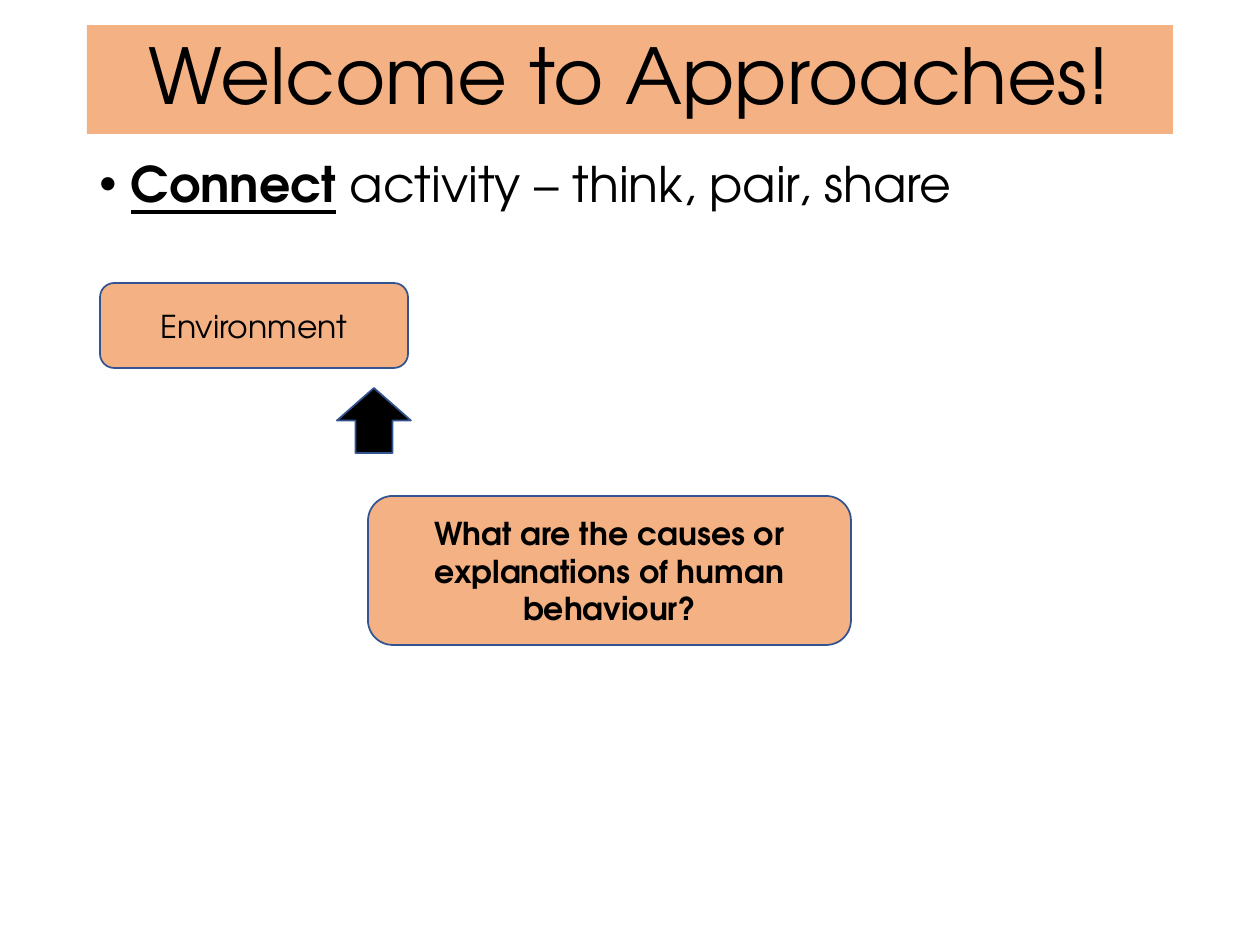
from dataclasses import dataclass

import pptx
import pptx.dml.color
import pptx.enum.shapes
import pptx.enum.text
import pptx.oxml
import pptx.oxml.ns
import pptx.util

PX_PER_INCH = 126
FONT = "TeX Gyre Adventor"
COLORS = {"peach": "F4B183", "black": "000000", "outline": "325491"}
SHAPES = pptx.enum.shapes.MSO_SHAPE


@dataclass
class Block:
    preset: int
    left: int
    top: int
    width: int
    height: int
    fill: str = "peach"
    text: str = ""
    size: int = 18
    bold: bool = False
    outlined: bool = True
    line_spacing: float = 1.0


BLOCKS = [
    Block(SHAPES.RECTANGLE, 87, 25, 1086, 109, text="Welcome to Approaches!",
          size=44, outlined=False, line_spacing=0.9),
    Block(SHAPES.FLOWCHART_ALTERNATE_PROCESS, 368, 496, 483, 149,
          text="What are the causes or explanations of human behaviour?", bold=True),
    Block(SHAPES.ROUNDED_RECTANGLE, 100, 283, 308, 85, text="Environment"),
    Block(SHAPES.UP_ARROW, 337, 388, 74, 65, fill="black"),
]


def px(length: int) -> pptx.util.Emu:
    return pptx.util.Emu(round(length * 914400 / PX_PER_INCH))


def color(name: str) -> pptx.dml.color.RGBColor:
    return pptx.dml.color.RGBColor.from_string(COLORS[name])


def set_font(paragraph, size: int) -> None:
    paragraph.font.name = FONT
    paragraph.font.size = pptx.util.Pt(size)
    paragraph.font.color.rgb = color("black")


def draw_block(slide, block: Block) -> None:
    shape = slide.shapes.add_shape(
        block.preset, px(block.left), px(block.top), px(block.width), px(block.height))
    shape.shadow.inherit = False
    shape.fill.solid()
    shape.fill.fore_color.rgb = color(block.fill)
    if block.outlined:
        shape.line.color.rgb = color("outline")
        shape.line.width = pptx.util.Pt(1)
    else:
        shape.line.fill.background()
    if block.text:
        frame = shape.text_frame
        frame.word_wrap = True
        frame.vertical_anchor = pptx.enum.text.MSO_ANCHOR.MIDDLE
        paragraph = frame.paragraphs[0]
        paragraph.text = block.text
        paragraph.alignment = pptx.enum.text.PP_ALIGN.CENTER
        paragraph.line_spacing = block.line_spacing
        set_font(paragraph, block.size)
        paragraph.font.bold = block.bold


def draw_activity(slide) -> None:
    box = slide.shapes.add_textbox(px(87), px(154), px(1086), px(600))
    box.text_frame.word_wrap = True
    paragraph = box.text_frame.paragraphs[0]
    paragraph.line_spacing = 0.9
    paragraph.space_before = pptx.util.Pt(10)
    set_font(paragraph, 28)
    keyword = paragraph.add_run()
    keyword.text = "Connect"
    keyword.font.bold = True
    keyword.font.underline = True
    paragraph.add_run().text = " activity – think, pair, share"

    # Hanging bullet, placed ahead of the default run properties
    properties = paragraph._p.get_or_add_pPr()
    indent = pptx.util.Inches(0.25)
    properties.set("marL", str(indent))
    properties.set("indent", str(-indent))
    namespace = pptx.oxml.ns.nsdecls("a")
    defaults = properties.find(pptx.oxml.ns.qn("a:defRPr"))
    for tag in ('buFont {} typeface="Arial"', 'buChar {} char="•"'):
        defaults.addprevious(pptx.oxml.parse_xml(f"<a:{tag.format(namespace)}/>"))


def main() -> None:
    presentation = pptx.Presentation()
    presentation.slide_width = pptx.util.Inches(10)
    presentation.slide_height = pptx.util.Inches(7.5)
    slide = presentation.slides.add_slide(presentation.slide_layouts[6])

    # Title banner, activity line, then the diagram
    title, *diagram = BLOCKS
    draw_block(slide, title)
    draw_activity(slide)
    for block in diagram:
        draw_block(slide, block)

    presentation.save("out.pptx")


if __name__ == "__main__":
    main()
